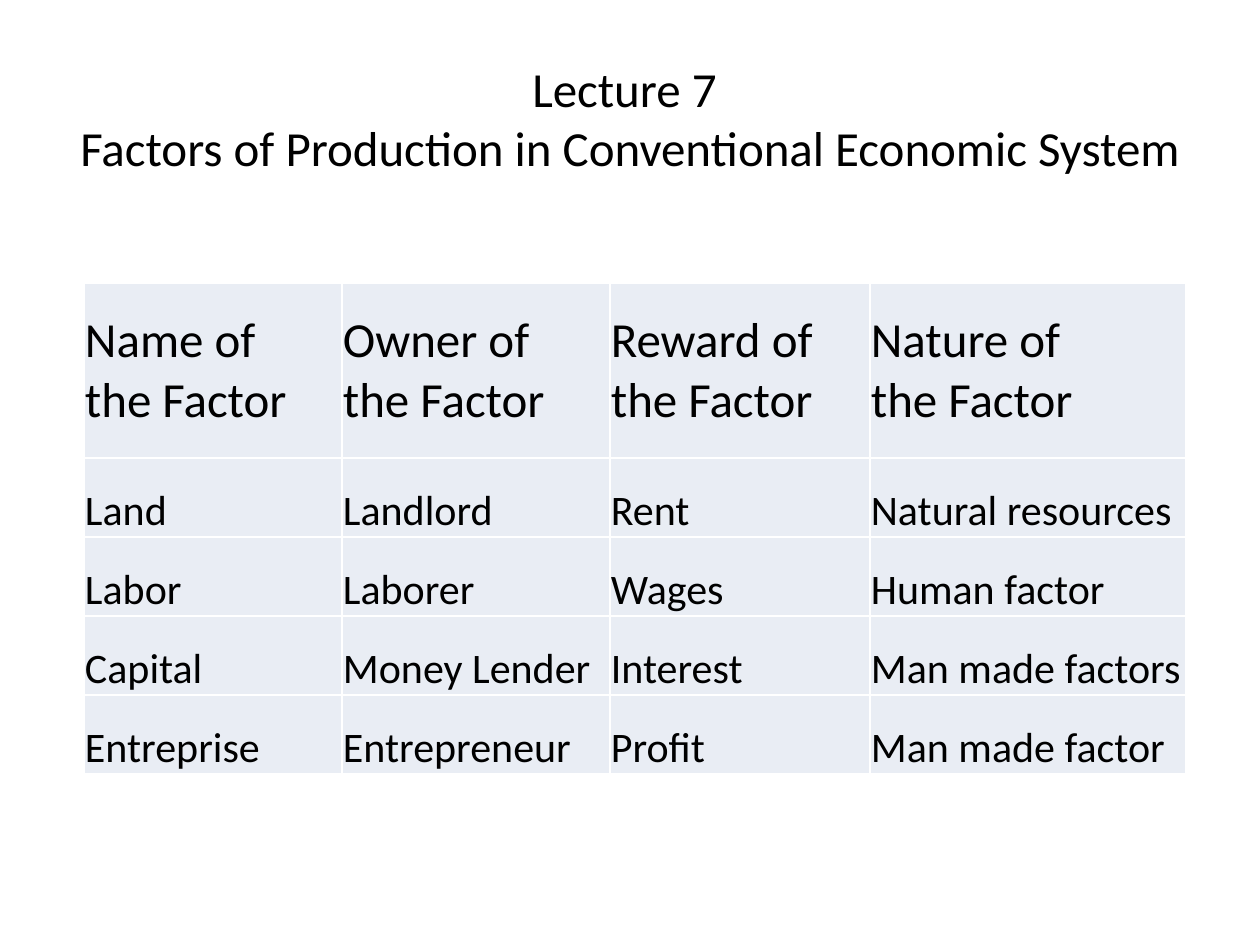
import pptx
import pptx.util
import pptx.dml.color
import pptx.enum.text
import pptx.oxml
import pptx.oxml.ns

SCALE = 914400 / 126  # EMU in one px
BLACK, WHITE, PALE = "000000", "FFFFFF", "E9EDF4"
ANCHOR = pptx.enum.text.MSO_ANCHOR
ALIGN = pptx.enum.text.PP_ALIGN

COLS = [258, 268, 260, 316]
ROWS = [175] + [79] * 4
FACTORS = [
    ["Name of\nthe Factor", "Owner of\nthe Factor",
     "Reward of the Factor", "Nature of\nthe Factor"],
    ["Land", "Landlord", "Rent", "Natural resources"],
    ["Labor", "Laborer", "Wages", "Human factor"],
    ["Capital", "Money Lender", "Interest", "Man made factors"],
    ["Entreprise", "Entrepreneur", "Profit", "Man made factor"],
]


def px(n):
    return pptx.util.Emu(round(n * SCALE))


def color(code):
    return pptx.dml.color.RGBColor.from_string(code)


def set_all(item, values):
    for name, value in values.items():
        setattr(item, name, value)


def write(frame, text, size, align):
    frame.text = text
    for para in frame.paragraphs:
        para.alignment = align
        for run in para.runs:
            set_all(run.font, {"name": "Calibri", "size": pptx.util.Pt(size)})
            run.font.color.rgb = color(BLACK)


def add_title(slide, text, box):
    frame = slide.shapes.add_textbox(*map(px, box)).text_frame
    set_all(frame, {"word_wrap": True, "vertical_anchor": ANCHOR.MIDDLE})
    write(frame, text, 28, ALIGN.CENTER)


def add_edges(cell):
    props = cell._tc.get_or_add_tcPr()
    for side in "LRTB":
        props.append(pptx.oxml.parse_xml(
            f'<a:ln{side} {pptx.oxml.ns.nsdecls("a")} w="12700"><a:solidFill>'
            f'<a:srgbClr val="{WHITE}"/></a:solidFill></a:ln{side}>'))


def style_cell(cell, text, size, anchor):
    set_all(cell, {"margin_left": px(1), "margin_right": px(1),
                   "margin_top": px(1), "margin_bottom": 0,
                   "vertical_anchor": anchor})
    write(cell.text_frame, text, size, ALIGN.LEFT)
    add_edges(cell)
    cell.fill.solid()
    cell.fill.fore_color.rgb = color(PALE)


def add_grid(slide, data, left, top):
    box = map(px, (left, top, sum(COLS), sum(ROWS)))
    grid = slide.shapes.add_table(len(ROWS), len(COLS), *box).table
    set_all(grid, {"first_row": False, "horz_banding": False})
    for col, width in zip(grid.columns, COLS):
        col.width = px(width)
    for i, (row, height) in enumerate(zip(grid.rows, ROWS)):
        row.height = px(height)
        size, anchor = (24, ANCHOR.BOTTOM) if i else (28, ANCHOR.MIDDLE)
        for cell, text in zip(row.cells, data[i]):
            style_cell(cell, text, size, anchor)


def main():
    deck = pptx.Presentation()
    set_all(deck, {"slide_width": px(1260), "slide_height": px(945)})
    slide = deck.slides.add_slide(deck.slide_layouts[6])

    # Heading
    add_title(slide, "Lecture 7 \vFactors of Production in Conventional "
              "Economic System", (63, 38, 1134, 158))

    # Table of factors
    add_grid(slide, FACTORS, 84, 283)

    deck.save("out.pptx")


if __name__ == "__main__":
    main()
